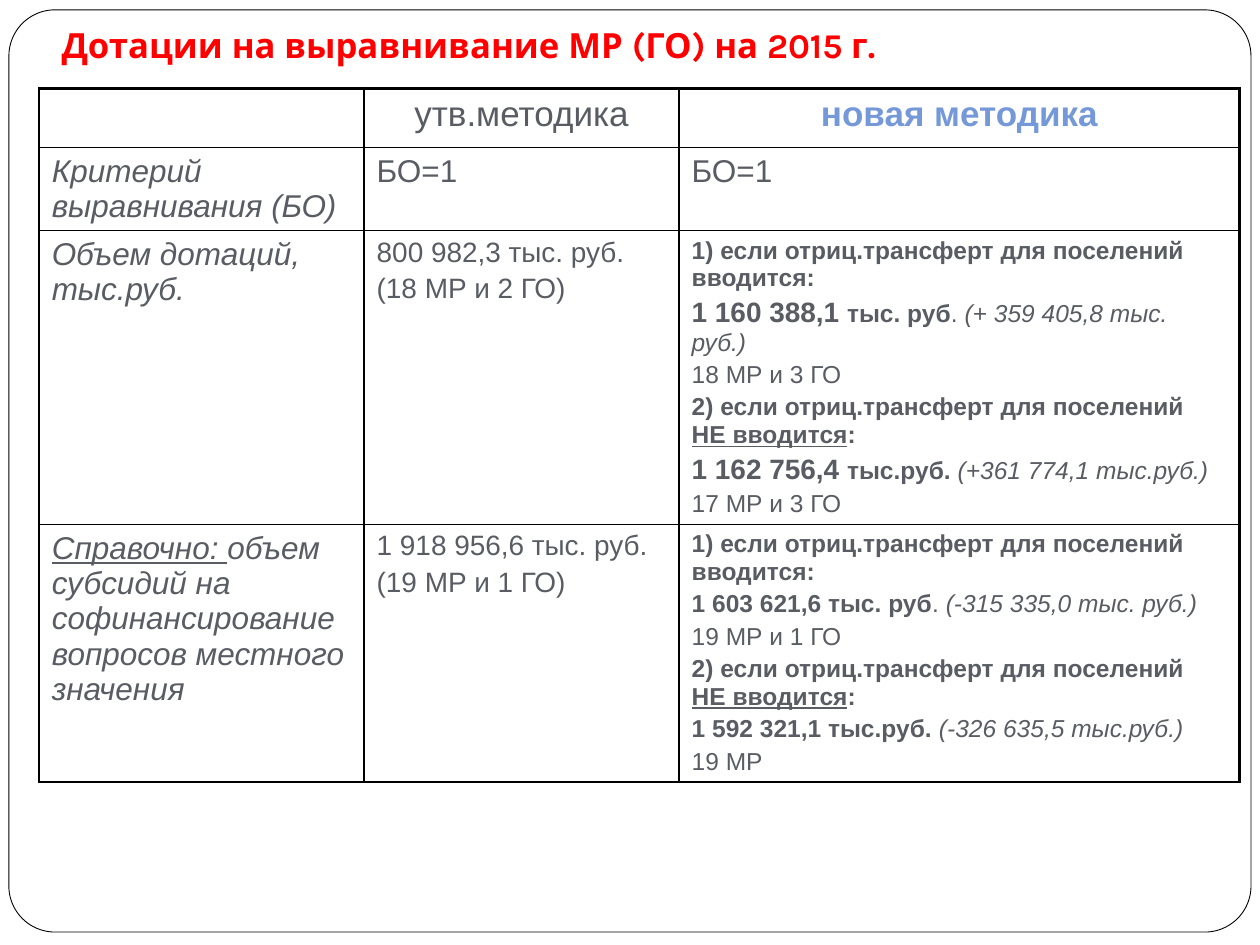
from lxml.etree import SubElement as Sub
from pptx import Presentation as Deck
from pptx.dml.color import RGBColor as Rgb
from pptx.enum.shapes import MSO_SHAPE as Form
from pptx.enum.text import MSO_ANCHOR as Anchor, PP_ALIGN as Align
from pptx.oxml.ns import qn
from pptx.util import Cm, Pt

THEME = {
    "red": "FF0000", "gray": "595D63", "blue": "7598D9",
    "black": "000000", "white": "FFFFFF",
    "head": "Karla", "body": "Arial",
    "title": 19.8, "top": 20, "label": 18, "sum": 16, "note": 14,
    "thin": 1, "thick": 2.25, "edge": 0.5,
}
TITLE = "Дотации на выравнивание МР (ГО) на 2015 г."
COLS = [6.55, 6.35, 11.3]
ROWS = [1.19, 1.68, 5.92, 5.18]


def case(verb, total, gain, towns):
    return [verb, total + [(gain, "i")], [(towns, "")]]


WITH = [("1) если отриц.трансферт для поселений вводится:", "b")]
SANS = [("2) если отриц.трансферт для поселений", "b"), "break",
        ("НЕ вводится", "bu"), (":", "b")]

GRANT = (
    case(WITH, [("1 160 388,1 ", "b", "sum"), ("тыс. руб", "b"), (". ", "")],
         "(+ 359 405,8 тыс. руб.)", "18 МР и 3 ГО")
    + case(SANS, [("1 162 756,4 ", "b", "sum"), ("тыс.руб. ", "b")],
           "(+361 774,1 тыс.руб.)", "17 МР и 3 ГО")
)
SHARE = (
    case(WITH, [("1 603 621,6 тыс. руб", "b"), (". ", "")],
         "(-315 335,0 тыс. руб.)", "19 МР и 1 ГО")
    + case(SANS, [("1 592 321,1 тыс.руб. ", "b")],
           "(-326 635,5 тыс.руб.)", "19 МР")
)
HEAD = {"size": "top", "align": Align.CENTER}
CELLS = [
    [None,
     ([[("утв.методика", "")]], HEAD),
     ([[("новая методика", "b")]], {**HEAD, "color": "blue"})],
    [([[("Критерий выравнивания (БО)", "i")]], {}),
     ([[("БО=1", "")]], {}),
     ([[("БО=1", "")]], {})],
    [([[("Объем дотаций, тыс.руб.", "i")]], {}),
     ([[("800 982,3 тыс. руб.", "")], [("(18 МР и 2 ГО)", "")]], {"size": "sum"}),
     (GRANT, {"size": "note"})],
    [([[("Справочно: ", "iu"),
        ("объем субсидий на софинансирование вопросов местного значения", "i")]], {}),
     ([[("1 918 956,6 тыс. руб.", "")], [("(19 МР и 1 ГО)", "")]], {"size": "sum"}),
     (SHARE, {"size": "note"})],
]


def tint(name):
    return Rgb.from_string(THEME[name])


def put(frame, paras, size="label", color="gray", font="body",
        align=Align.LEFT, gap=0.2):
    frame.word_wrap = True
    for n, parts in enumerate(paras):
        para = frame.add_paragraph() if n else frame.paragraphs[0]
        para.alignment = align
        tall = THEME[size]
        for part in parts:
            if part == "break":
                para.add_line_break()
                continue
            text, style, *own = part
            points = THEME[own[0] if own else size]
            tall = max(tall, points)
            run = para.add_run()
            run.text = text
            face = run.font
            face.name = THEME[font]
            face.size = Pt(points)
            face.color.rgb = tint(color)
            face.bold = "b" in style
            face.italic = "i" in style
            face.underline = "u" in style
        para.space_before = Pt(tall * gap)


def rule(cell, row, col):
    props = cell._tc.get_or_add_tcPr()
    heavy = {"T": row == 0, "R": col == len(COLS) - 1}
    for n, side in enumerate("LRTB"):
        width = Pt(THEME["thick" if heavy.get(side) else "thin"])
        line = props.makeelement(qn(f"a:ln{side}"), {"w": str(width)})
        props.insert(n, line)
        fill = Sub(line, qn("a:solidFill"))
        Sub(fill, qn("a:srgbClr"), val=THEME["black"])


def border(slide):
    box = slide.shapes.add_shape(
        Form.ROUNDED_RECTANGLE, Cm(0.18), Cm(0.2), Cm(25.04), Cm(18.59))
    box.adjustments[0] = 0.05
    box.shadow.inherit = False
    box.fill.solid()
    box.fill.fore_color.rgb = tint("white")
    box.line.color.rgb = tint("black")
    box.line.width = Pt(THEME["edge"])
    slide.shapes._spTree.insert(2, box._element)


def title(slide):
    box = slide.shapes.title
    box.left, box.top, box.width, box.height = map(Cm, (0.99, 0.58, 24.82, 0.99))
    frame = box.text_frame
    frame.vertical_anchor = Anchor.BOTTOM
    frame.margin_left = frame.margin_right = frame.margin_bottom = Cm(0.25)
    frame.margin_top = Cm(0.13)
    put(frame, [[(TITLE, "b")]], size="title", color="red", font="head", gap=0)


def grid(slide):
    table = slide.shapes.add_table(
        len(ROWS), len(COLS), Cm(0.79), Cm(1.78), Cm(sum(COLS)), Cm(sum(ROWS))).table
    table.first_row = table.horz_banding = False
    for col, width in zip(table.columns, COLS):
        col.width = Cm(width)
    for r, (row, tall) in enumerate(zip(table.rows, ROWS)):
        row.height = Cm(tall)
        for c, item in enumerate(CELLS[r]):
            cell = table.cell(r, c)
            cell.fill.solid()
            cell.fill.fore_color.rgb = tint("white")
            rule(cell, r, c)
            if item:
                paras, style = item
                put(cell.text_frame, paras, **style)


def main():
    deck = Deck()
    deck.slide_width, deck.slide_height = Cm(25.4), Cm(19.05)
    slide = deck.slides.add_slide(deck.slide_layouts[5])
    border(slide)
    title(slide)
    grid(slide)
    deck.save("out.pptx")


if __name__ == "__main__":
    main()
